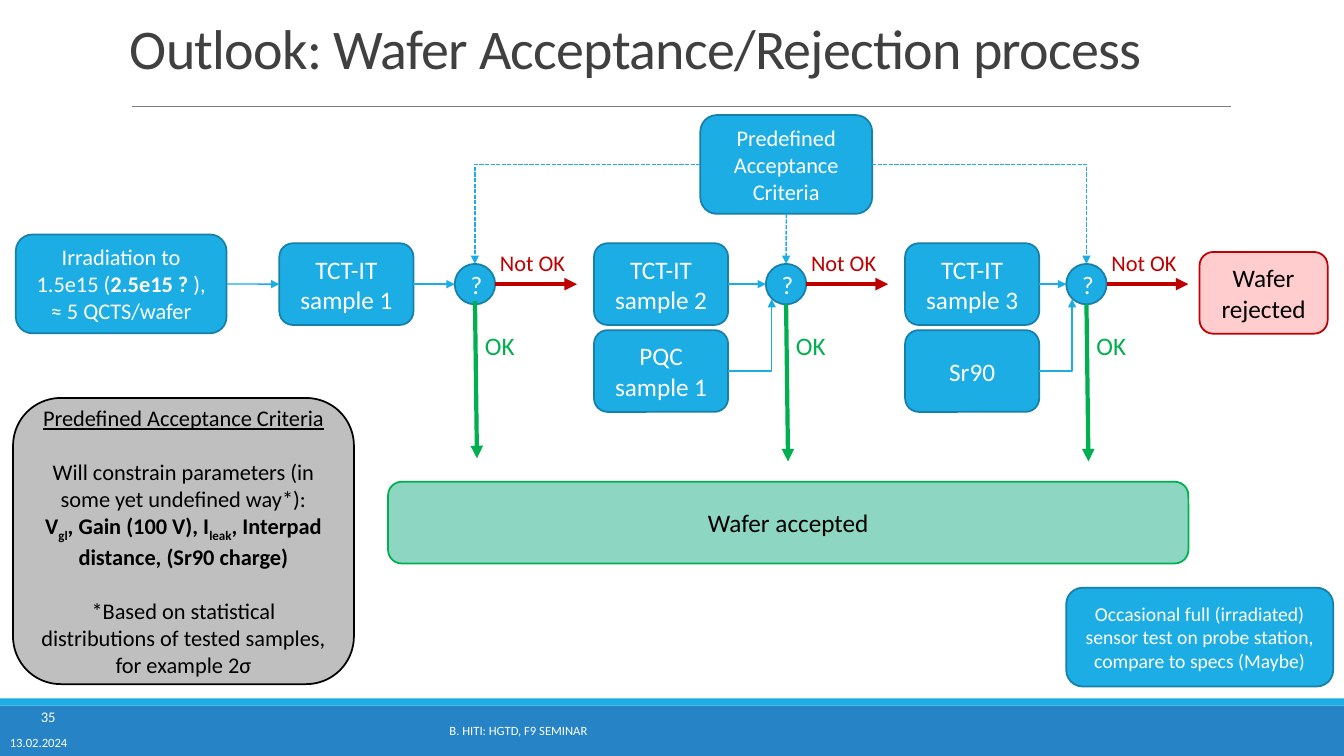
"""Build the wafer acceptance and rejection flow slide."""
from dataclasses import dataclass

from lxml import etree
from pptx import Presentation
from pptx.dml.color import RGBColor
from pptx.enum.dml import MSO_LINE
from pptx.enum.shapes import MSO_CONNECTOR, MSO_SHAPE
from pptx.enum.text import MSO_ANCHOR, MSO_AUTO_SIZE, PP_ALIGN
from pptx.oxml.ns import qn
from pptx.util import Cm, Pt

RECT, ROUND, OVAL = MSO_SHAPE.RECTANGLE, MSO_SHAPE.ROUNDED_RECTANGLE, MSO_SHAPE.OVAL
STRAIGHT, ELBOW = MSO_CONNECTOR.STRAIGHT, MSO_CONNECTOR.ELBOW
LEFT, CENTER, RIGHT = PP_ALIGN.LEFT, PP_ALIGN.CENTER, PP_ALIGN.RIGHT
TOP, MIDDLE, BOTTOM = MSO_ANCHOR.TOP, MSO_ANCHOR.MIDDLE, MSO_ANCHOR.BOTTOM
DASH = MSO_LINE.SQUARE_DOT
TOP_SITE, LEFT_SITE, BOTTOM_SITE, RIGHT_SITE = range(4)
TITLE_ONLY = 5


@dataclass(frozen=True)
class Theme:
    """Colours and type sizes of the slide."""
    font: str = "Calibri"
    sky: str = "1CADE4"
    sky_edge: str = "1580A9"
    bar: str = "2683C6"
    rule: str = "808080"
    title: str = "404040"
    white: str = "FFFFFF"
    black: str = "000000"
    red: str = "C00000"
    pink: str = "FFCDCD"
    green: str = "00B050"
    mint: str = "8DD6C1"
    grey: str = "BFBFBF"
    title_size: float = 40
    large: float = 18
    medium: float = 16
    small: float = 14
    number: float = 10.5
    footer: float = 9


THEME = Theme()
ROW_MIDDLE = 7.16
STEP_SIZE = (3.38, 2.06)
CIRCLE = 1.02


def rgb(colour):
    """Turn a hex string into a colour."""
    return RGBColor.from_string(colour)


def write(frame, paragraphs, size, colour, align=CENTER, anchor=MIDDLE):
    """Fill a text frame with paragraphs, each a string or a list of (text, font settings)."""
    frame.vertical_anchor = anchor
    for index, content in enumerate(paragraphs):
        paragraph = frame.paragraphs[0] if index == 0 else frame.add_paragraph()
        paragraph.alignment = align
        paragraph.font.name = THEME.font
        paragraph.font.size = Pt(size)
        paragraph.font.color.rgb = rgb(colour)
        for text, settings in [(content, {})] if isinstance(content, str) else content:
            run = paragraph.add_run()
            run.text = text
            for name, value in settings.items():
                setattr(run.font, name, value)


def add_box(slide, kind, place, paragraphs=(), size=THEME.large, colour=THEME.white,
            fill=THEME.sky, edge=THEME.sky_edge):
    """Add a filled shape with centred text."""
    box = slide.shapes.add_shape(kind, *map(Cm, place))
    box.shadow.inherit = False
    box.fill.solid()
    box.fill.fore_color.rgb = rgb(fill)
    if edge:
        box.line.color.rgb = rgb(edge)
        box.line.width = Pt(1.25)
    else:
        box.line.fill.background()
    write(box.text_frame, paragraphs, size, colour)
    return box


def add_label(slide, place, text, size, colour, align=LEFT, anchor=MIDDLE, wrap=True):
    """Add a plain line of text."""
    frame = slide.shapes.add_textbox(*map(Cm, place)).text_frame
    frame.word_wrap = wrap
    write(frame, [text], size, colour, align, anchor)


def add_line(slide, start, end, colour, width, kind=STRAIGHT, dash=None, arrow=True):
    """Add a line, by default with an arrowhead; elbows have a single corner."""
    line = slide.shapes.add_connector(kind, *start, *end)
    line.line.color.rgb = rgb(colour)
    line.line.width = Pt(width)
    if dash:
        line.line.dash_style = dash
    properties = line._element.spPr
    if kind == ELBOW:
        properties.find(qn("a:prstGeom")).set("prst", "bentConnector2")
    if arrow:
        etree.SubElement(properties.find(qn("a:ln")), qn("a:tailEnd"), type="triangle")
    etree.SubElement(properties, qn("a:effectLst"))
    return line


def right_middle(box):
    """Return the middle of a shape's right side."""
    return box.left + box.width, box.top + box.height // 2


def link(slide, source, end, kind=STRAIGHT):
    """Draw a thin arrow from the right side of a box to a point."""
    arrow = add_line(slide, right_middle(source), end, THEME.sky, 1, kind)
    if kind == STRAIGHT:
        arrow.begin_connect(source, RIGHT_SITE)
    return arrow


def add_frame(slide):
    """Add the title, its rule and the footer band."""
    add_box(slide, RECT, (0, 17.78, 33.87, 1.27), fill=THEME.bar, edge=None)
    add_box(slide, RECT, (0, 17.6, 33.87, 0.18), edge=None)
    add_line(slide, (Cm(3.33), Cm(2.67)), (Cm(31.01), Cm(2.67)), THEME.rule, 0.5, arrow=False)
    title = slide.shapes.title
    title.left, title.top, title.width, title.height = map(Cm, (3.02, 0, 27.94, 2.16))
    title.text_frame.auto_size = MSO_AUTO_SIZE.NONE
    write(title.text_frame, ["Outlook: Wafer Acceptance/Rejection process"],
          THEME.title_size, THEME.title, LEFT, BOTTOM)
    heading = title.text_frame.paragraphs[0]
    heading.line_spacing = 0.85
    heading.runs[0]._r.get_or_add_rPr().set("spc", "-50")
    add_label(slide, (0, 18.39, 2.06, 0.66), "13.02.2024", THEME.footer, THEME.white)
    add_label(slide, (3.07, 17.91, 19.99, 1.02), "B. HITI: HGTD, F9 SEMINAR",
              THEME.footer, THEME.white, CENTER)
    add_label(slide, (0, 17.78, 1.65, 0.56), "35", THEME.number, THEME.white, RIGHT)


def add_stage(slide, step_left, circle_left, ok_top, step_text, extra_text=None):
    """Add a test, its optional second test and its decision; return test and decision."""
    width, height = STEP_SIZE
    centre = circle_left + CIRCLE / 2
    step = add_box(slide, ROUND, (step_left, ROW_MIDDLE - height / 2, width, height), [step_text])
    decision = add_box(slide, OVAL, (circle_left, ROW_MIDDLE - CIRCLE / 2, CIRCLE, CIRCLE), ["?"])
    link(slide, step, (decision.left, Cm(ROW_MIDDLE)))
    add_line(slide, right_middle(decision), (Cm(circle_left + CIRCLE + 2.06), Cm(ROW_MIDDLE)),
             THEME.red, 3)
    add_line(slide, (Cm(centre), Cm(ok_top)), (Cm(centre + 0.05), Cm(ok_top + 3.96)),
             THEME.green, 3)
    add_label(slide, (centre, 8.2, 1.27, 1.02), "OK", THEME.large, THEME.green,
              anchor=TOP, wrap=False)
    add_label(slide, (circle_left + 0.89, 6.15, 2.18, 0.94), "Not OK", THEME.medium, THEME.red,
              anchor=TOP, wrap=False)
    if extra_text:
        extra = add_box(slide, ROUND, (step_left, 8.32, width, height), [extra_text])
        link(slide, extra, (Cm(circle_left + 0.15), Cm(7.54)), ELBOW)
    return step, decision


def add_criteria_links(slide, criteria, decisions):
    """Draw dashed arrows from the criteria box to the three decisions."""
    middle = criteria.left + criteria.width // 2, criteria.top + criteria.height // 2
    starts = ((criteria.left, middle[1], ELBOW, LEFT_SITE),
              (middle[0], criteria.top + criteria.height, STRAIGHT, BOTTOM_SITE),
              (criteria.left + criteria.width, middle[1], ELBOW, RIGHT_SITE))
    for (x, y, kind, site), decision in zip(starts, decisions):
        end = decision.left + decision.width // 2, decision.top
        arrow = add_line(slide, (x, y), end, THEME.sky, 1, kind, DASH)
        if kind == STRAIGHT:
            arrow.begin_connect(criteria, site)
            arrow.end_connect(decision, TOP_SITE)


def add_criteria_note(slide):
    """Add the grey note that explains the criteria."""
    bold, lowered = {"bold": True}, {"bold": True, "subscript": True}
    note = add_box(slide, ROUND, (0.33, 10.03, 8.59, 7.21), [
        [("Predefined Acceptance Criteria", {"underline": True})],
        "Will constrain parameters (in some yet undefined way*):",
        [("V", bold), ("gl", lowered), (", Gain (100 V), I", bold), ("leak", lowered),
         (", Interpad distance, (Sr90 charge)", bold)],
        "*Based on statistical distributions of tested samples, for example 2σ",
    ], THEME.medium, THEME.black, THEME.grey, THEME.black)
    for run in note.text_frame.paragraphs[2].runs:
        if run.text in ("gl", "leak"):
            run._r.get_or_add_rPr().set("baseline", "-25000")
    for index in (1, 3):
        note.text_frame.paragraphs[index].space_before = Pt(19.5)


def main():
    """Build and save the slide."""
    deck = Presentation()
    deck.slide_width, deck.slide_height = Cm(33.87), Cm(19.05)
    slide = deck.slides.add_slide(deck.slide_layouts[TITLE_ONLY])
    add_frame(slide)
    criteria = add_box(slide, ROUND, (17.65, 2.9, 4.33, 2.49),
                       ["Predefined Acceptance Criteria"], THEME.medium)
    irradiation = add_box(slide, ROUND, (0.4, 5.91, 5.31, 2.49), [
        [("Irradiation to 1.5e15 (", {}), ("2.5e15 ? ", {"bold": True}), ("),", {})],
        "≈ 5 QCTS/wafer"], THEME.medium)
    stages = [add_stage(slide, *stage) for stage in (
        (7.04, 11.46, 7.59, "TCT-IT sample 1"),
        (14.97, 19.3, 7.67, "TCT-IT sample 2", "PQC sample 1"),
        (22.81, 26.87, 7.67, "TCT-IT sample 3", "Sr90"))]
    first_step = stages[0][0]
    irradiated = link(slide, irradiation, (first_step.left, Cm(ROW_MIDDLE)))
    irradiated.end_connect(first_step, LEFT_SITE)
    add_criteria_links(slide, criteria, [decision for _, decision in stages])
    add_box(slide, ROUND, (9.78, 12.14, 20.17, 2.06), ["Wafer accepted"],
            colour=THEME.black, fill=THEME.mint, edge=THEME.green)
    add_box(slide, ROUND, (30.23, 6.35, 3.23, 2.06), ["Wafer rejected"],
            colour=THEME.black, fill=THEME.pink, edge=THEME.red)
    add_box(slide, ROUND, (26.87, 14.81, 6.73, 2.49),
            ["Occasional full (irradiated) sensor test on probe station, "
             "compare to specs (Maybe)"], THEME.small)
    add_criteria_note(slide)
    deck.save("out.pptx")


if __name__ == "__main__":
    main()
